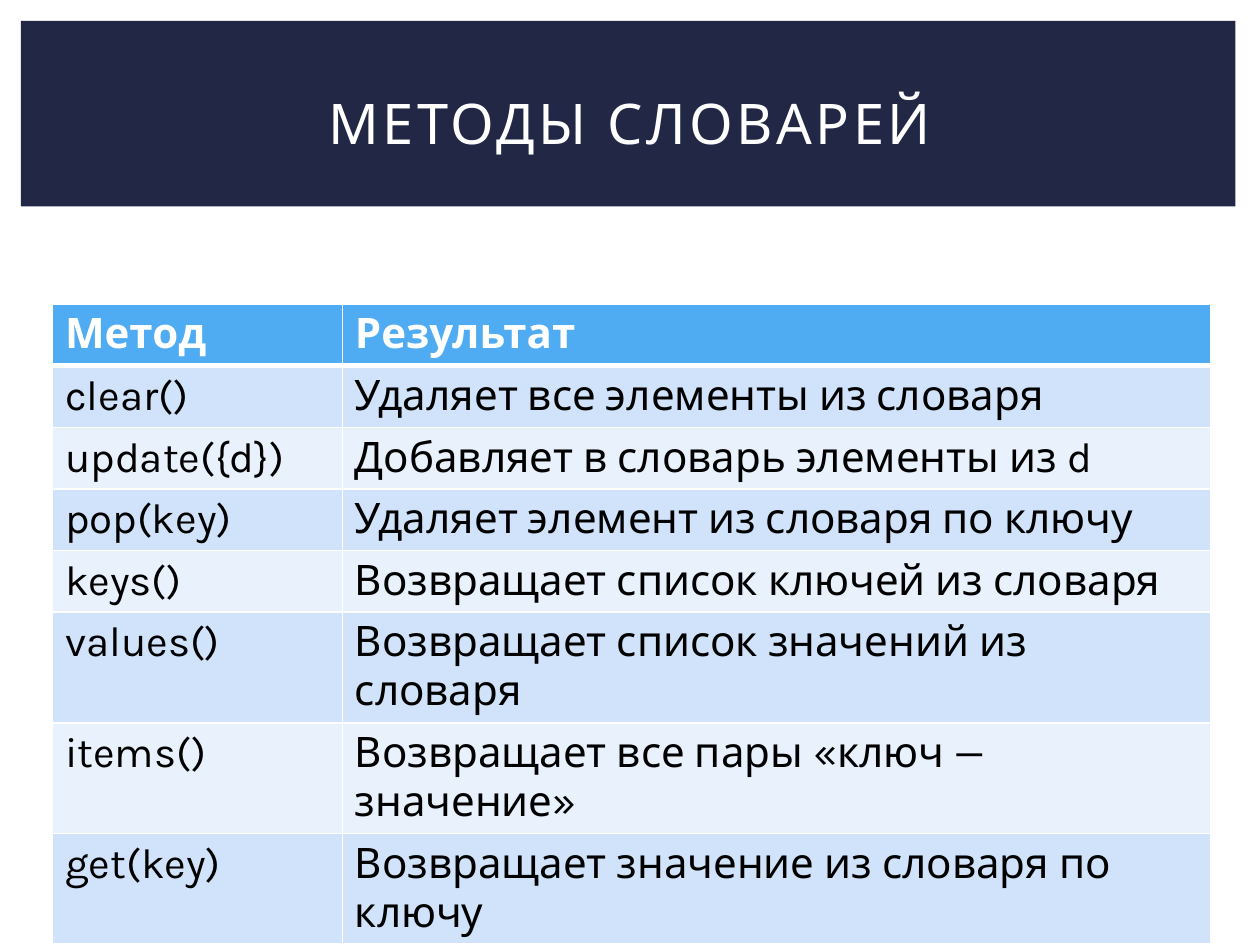
from lxml import etree
from pptx import Presentation
from pptx.dml.color import RGBColor
from pptx.enum.shapes import MSO_SHAPE
from pptx.enum.text import MSO_ANCHOR, PP_ALIGN
from pptx.oxml.ns import qn
from pptx.util import Pt

RECTANGLE = MSO_SHAPE.RECTANGLE
MIDDLE = MSO_ANCHOR.MIDDLE
LEFT, CENTER = PP_ALIGN.LEFT, PP_ALIGN.CENTER

METHODS = [
    ("Метод", "Результат"),
    ("clear()", "Удаляет все элементы из словаря"),
    ("update({d})", "Добавляет в словарь элементы из d"),
    ("pop(key)", "Удаляет элемент из словаря по ключу"),
    ("keys()", "Возвращает список ключей из словаря"),
    ("values()", "Возвращает список значений из словаря"),
    ("items()", "Возвращает все пары «ключ — значение»"),
    ("get(key)", "Возвращает значение из словаря по ключу"),
]


def color(hex_value):
    return RGBColor.from_string(hex_value)


def write(frame, text, size=24, ink="000000", bold=False, align=LEFT,
          font="Karla", spacing=0):
    paragraph = frame.paragraphs[0]
    paragraph.alignment = align
    run = paragraph.add_run()
    run.text = text
    run.font.name = font
    run.font.size = Pt(size)
    run.font.bold = bold
    run.font.color.rgb = color(ink)
    if spacing:
        run.font._element.set("spc", str(spacing * 100))


class SlideBuilder:
    white = "FFFFFF"
    navy = "212745"
    header_blue = "4FACF3"
    bands = ("D0E3FA", "E9F1FD")

    def __init__(self, slide):
        self.slide = slide

    def banner(self, left, top, width, height):
        band = self.slide.shapes.add_shape(
            RECTANGLE, Pt(left), Pt(top), Pt(width), Pt(height))
        band.shadow.inherit = False
        band.fill.solid()
        band.fill.fore_color.rgb = color(self.navy)
        band.line.fill.background()

    def title(self, text, left, top, width, height):
        heading = self.slide.shapes.add_textbox(
            Pt(left), Pt(top), Pt(width), Pt(height)).text_frame
        heading.word_wrap = True
        heading.vertical_anchor = MIDDLE
        write(heading, text, size=32, ink=self.white, align=CENTER, spacing=2)

    def borders(self, cell, bottom, top):
        properties = cell._tc.get_or_add_tcPr()
        for side, width in (("L", 1), ("R", 1), ("T", top), ("B", bottom)):
            edge = etree.SubElement(properties, qn(f"a:ln{side}"), w=str(Pt(width)))
            fill = etree.SubElement(edge, qn("a:solidFill"))
            etree.SubElement(fill, qn("a:srgbClr"), val=self.white)

    def table(self, rows, left, top, widths, row_height):
        grid = self.slide.shapes.add_table(
            len(rows), len(widths), Pt(left), Pt(top),
            Pt(sum(widths)), Pt(row_height * len(rows))).table
        for column, width in zip(grid.columns, widths):
            column.width = Pt(width)
        for index, texts in enumerate(rows):
            grid.rows[index].height = Pt(row_height)
            header = index == 0
            fill = self.header_blue if header else self.bands[(index - 1) % 2]
            for column, text in enumerate(texts):
                cell = grid.cell(index, column)
                self.borders(cell, bottom=3 if header else 1,
                             top=3 if index == 1 else 1)
                cell.fill.solid()
                cell.fill.fore_color.rgb = color(fill)
                write(cell.text_frame, text, bold=header,
                      ink=self.white if header else "000000")


def main():
    deck = Presentation()
    deck.slide_width, deck.slide_height = Pt(720), Pt(540)
    builder = SlideBuilder(deck.slides.add_slide(deck.slide_layouts[6]))
    builder.banner(12, 12, 694, 106)
    builder.table(METHODS, 30, 173.8, (165.6, 496), 29.2)
    builder.title("МЕТОДЫ СЛОВАРЕЙ", 30, 28, 660, 83)
    deck.save("out.pptx")


if __name__ == "__main__":
    main()
